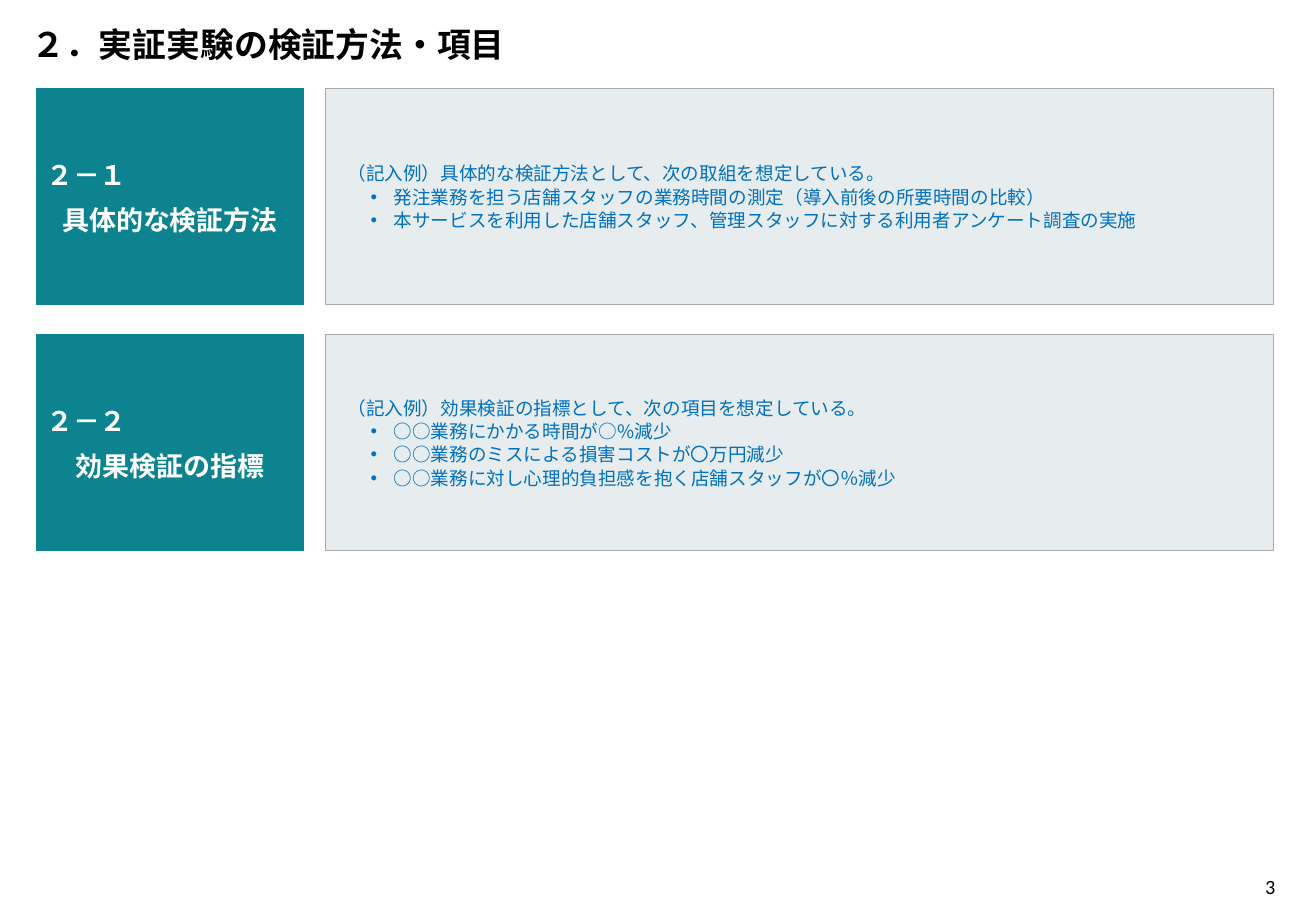
from lxml.etree import SubElement
from pptx import Presentation
from pptx.dml.color import RGBColor
from pptx.enum.shapes import MSO_SHAPE
from pptx.enum.text import MSO_ANCHOR, PP_ALIGN
from pptx.oxml.ns import qn
from pptx.util import Inches, Pt

HUES = {"teal": "0D8390", "pale": "E7EDEE", "edge": "A7A8AA",
        "blue": "0070C0", "white": "FFFFFF", "black": "000000"}
FACE = "Noto Sans CJK JP"

# Text formats
HEAD = {"size": Pt(20), "bold": True, "name": FACE}
LABEL = {"size": Pt(16), "bold": True, "name": FACE}
BODY = {"size": Pt(11), "bold": False, "name": FACE}
PAGE = {"size": Pt(12), "bold": False, "name": "Calibri"}

# Grid, in percent of the slide's width and height
LEFT, SIDE = 2.77, 20.31
MAIN, WIDE = 24.75, 72.02
TOP, STEP, TALL = 9.67, 27, 23.73

ROWS = [
    ("２－１", "具体的な検証方法",
     "（記入例）具体的な検証方法として、次の取組を想定している。",
     ["発注業務を担う店舗スタッフの業務時間の測定（導入前後の所要時間の比較）",
      "本サービスを利用した店舗スタッフ、管理スタッフに対する利用者アンケート調査の実施"]),
    ("２－２", "効果検証の指標",
     "（記入例）効果検証の指標として、次の項目を想定している。",
     ["○○業務にかかる時間が○%減少",
      "○○業務のミスによる損害コストが〇万円減少",
      "○○業務に対し心理的負担感を抱く店舗スタッフが〇％減少"]),
]


def hue(name):
    return RGBColor.from_string(HUES[name])


class Deck:
    def __init__(self, wide, high):
        self.prs = Presentation()
        self.prs.slide_width = Inches(wide)
        self.prs.slide_height = Inches(high)
        self.slide = self.prs.slides.add_slide(self.prs.slide_layouts[6])

    def place(self, x, y, w, h):
        wide, high = self.prs.slide_width, self.prs.slide_height
        return [int(part * full / 100) for part, full in
                ((x, wide), (y, high), (w, wide), (h, high))]

    def frame(self, shape, pad):
        frame = shape.text_frame
        style = {"word_wrap": True, "vertical_anchor": MSO_ANCHOR.MIDDLE,
                 "margin_left": pad, "margin_right": pad,
                 "margin_top": pad, "margin_bottom": pad}
        for key, val in style.items():
            setattr(frame, key, val)
        return frame

    def text(self, at, pad):
        return self.frame(self.slide.shapes.add_textbox(*self.place(*at)), pad)

    def panel(self, at, fill, edge):
        shape = self.slide.shapes.add_shape(MSO_SHAPE.RECTANGLE, *self.place(*at))
        shape.shadow.inherit = False
        shape.fill.solid()
        shape.fill.fore_color.rgb = hue(fill)
        shape.line.color.rgb = hue(edge)
        shape.line.width = Pt(0.5)
        return self.frame(shape, Inches(0.08))

    def para(self, frame, words, form, tint, align=PP_ALIGN.LEFT,
             pitch=None, gap=0, dent=None, dot=False):
        first = not frame.paragraphs[0].runs
        para = frame.paragraphs[0] if first else frame.add_paragraph()
        para.alignment = align
        if pitch:
            para.line_spacing = Pt(pitch)
        para.space_before = Pt(0 if first else gap)
        props = para._p.get_or_add_pPr()
        if dent:
            props.set("marL", str(Inches(dent[0])))
            props.set("indent", str(Inches(dent[1])))
        if dot:
            SubElement(props, qn("a:buFont")).set("typeface", "Arial")
            SubElement(props, qn("a:buChar")).set("char", "•")
        run = para.add_run()
        run.text = words
        for key, val in form.items():
            setattr(run.font, key, val)
        run.font.color.rgb = hue(tint)
        # East Asian face
        SubElement(run._r.get_or_add_rPr(), qn("a:ea")).set("typeface", form["name"])


def main():
    deck = Deck(10.83, 7.5)

    # Title
    title = deck.text((1.48, 1.87, 91.6, 6), Inches(0.1))
    deck.para(title, "２．実証実験の検証方法・項目", HEAD, "black")

    # Label and example for each row
    for row, (mark, name, lead, items) in enumerate(ROWS):
        top = TOP + row * STEP
        label = deck.panel((LEFT, top, SIDE, TALL), "teal", "teal")
        deck.para(label, mark, LABEL, "white", pitch=20.7)
        deck.para(label, name, LABEL, "white", PP_ALIGN.CENTER, pitch=20.7, gap=6)

        body = deck.panel((MAIN, top, WIDE, TALL), "pale", "edge")
        deck.para(body, lead, BODY, "blue", pitch=13.9, dent=(0.1, 0))
        for item in items:
            deck.para(body, item, BODY, "blue", pitch=13.9,
                      dent=(0.48, -0.19), dot=True)

    # Page number
    page = deck.text((94.09, 96, 4.89, 2.67), 0)
    deck.para(page, "3", PAGE, "black", PP_ALIGN.CENTER)

    deck.prs.save("out.pptx")


if __name__ == "__main__":
    main()
